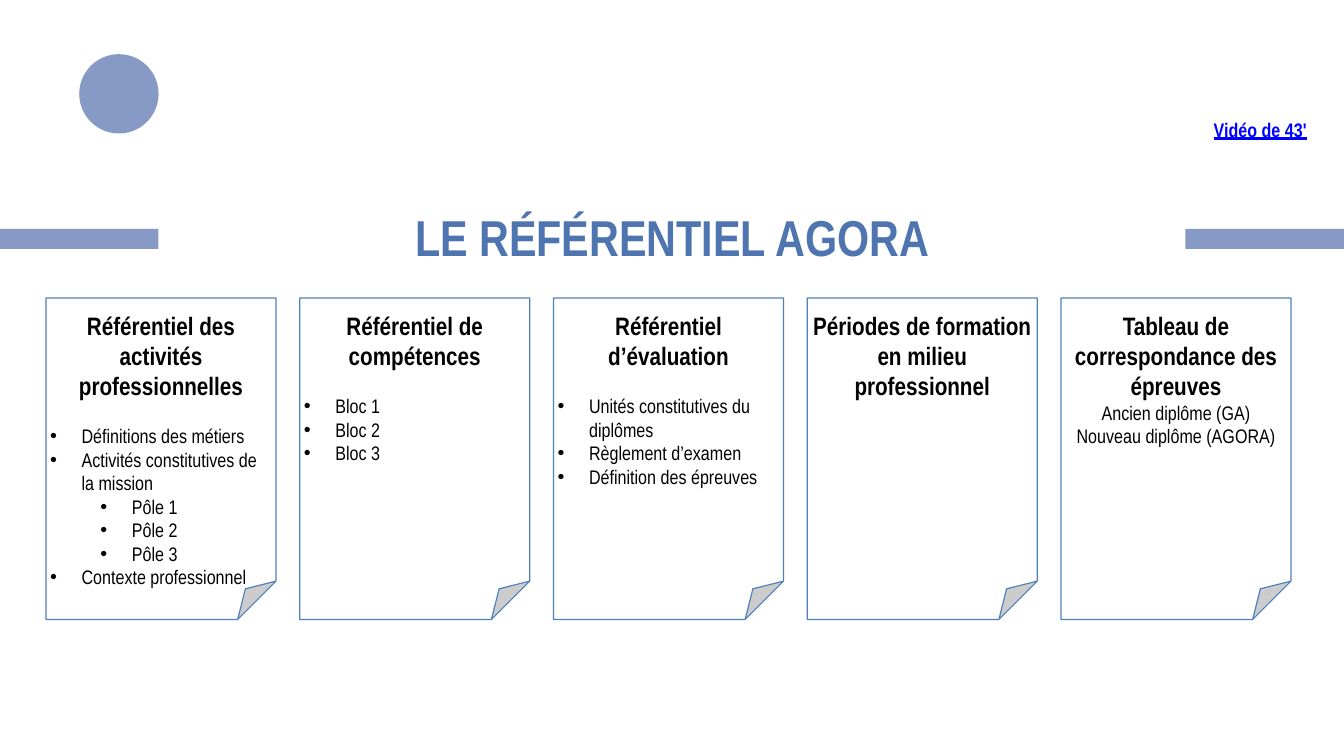
from lxml import etree
from pptx import Presentation
from pptx.dml.color import RGBColor
from pptx.enum.shapes import MSO_SHAPE as Preset
from pptx.enum.text import MSO_ANCHOR as Anchor, PP_ALIGN as Align
from pptx.oxml.ns import qn
from pptx.util import Pt

FONT = "Arial Narrow"
SLIDE_WIDTH, SLIDE_HEIGHT = 960, 540
ACCENT = "879AC6"

CARD_LEFT, CARD_TOP, CARD_PITCH = 32.9, 212.8, 181.25
CARD_WIDTH, CARD_HEIGHT = 164.3, 229.7
BULLET_HANG = 22.5
LEVEL_INDENT = 36
LIST_GAP = 16.8

# Each card: heading, bullets as (level, text), centred lines
CARDS = [
    ("Référentiel des activités professionnelles",
     [(0, "Définitions des métiers"),
      (0, "Activités constitutives de la mission"),
      (1, "Pôle 1"), (1, "Pôle 2"), (1, "Pôle 3"),
      (0, "Contexte professionnel")], []),
    ("Référentiel de compétences",
     [(0, "Bloc 1"), (0, "Bloc 2"), (0, "Bloc 3")], []),
    ("Référentiel d’évaluation",
     [(0, "Unités constitutives du diplômes"),
      (0, "Règlement d’examen"),
      (0, "Définition des épreuves")], []),
    ("Périodes de formation en milieu professionnel", [], []),
    ("Tableau de correspondance des épreuves", [],
     ["Ancien diplôme (GA)", "Nouveau diplôme (AGORA)"]),
]


def color(hex_string):
    return RGBColor.from_string(hex_string)


def add_preset(slide, preset, left, top, width, height, fill, line=None):
    shape = slide.shapes.add_shape(
        preset, Pt(left), Pt(top), Pt(width), Pt(height))
    shape.shadow.inherit = False
    shape.fill.solid()
    shape.fill.fore_color.rgb = color(fill)
    if line:
        shape.line.color.rgb = color(line)
        shape.line.width = Pt(0.85)
    else:
        shape.line.fill.background()
    return shape


def set_frame(frame, anchor=Anchor.TOP, margins=(0, 0, 0, 0)):
    """Prepare a text frame; margins are left, top, right, bottom."""
    frame.word_wrap = True
    frame.vertical_anchor = anchor
    (frame.margin_left, frame.margin_top,
     frame.margin_right, frame.margin_bottom) = map(Pt, margins)
    return frame


def add_bullet(paragraph, level):
    paragraph.level = level
    properties = paragraph._p.get_or_add_pPr()
    properties.set("marL", str(Pt(BULLET_HANG + level * LEVEL_INDENT)))
    properties.set("indent", str(-Pt(BULLET_HANG)))
    etree.SubElement(properties, qn("a:buFont"), typeface="Arial")
    etree.SubElement(properties, qn("a:buChar"), char="•")


def write(frame, text, size=14, bold=False, underline=None, hex_color="000000",
          align=Align.LEFT, level=None, space_before=0):
    """Fill the empty first paragraph or append one; a level makes a bullet."""
    paragraph = frame.paragraphs[0] if not frame.text else frame.add_paragraph()
    paragraph.alignment = align
    if space_before:
        paragraph.space_before = Pt(space_before)
    if level is not None:
        add_bullet(paragraph, level)
    run = paragraph.add_run()
    run.text = text
    font = run.font
    font.name, font.size, font.bold = FONT, Pt(size), bold
    font.underline = underline
    font.color.rgb = color(hex_color)


def add_text(slide, text, left, top, width, height, anchor, **text_format):
    box = slide.shapes.add_textbox(Pt(left), Pt(top), Pt(width), Pt(height))
    write(set_frame(box.text_frame, anchor), text, **text_format)


def add_card(slide, left, heading, bullets, lines):
    card = add_preset(slide, Preset.FOLDED_CORNER, left, CARD_TOP,
                      CARD_WIDTH, CARD_HEIGHT, "FFFFFF", line="4F81BD")
    frame = set_frame(card.text_frame, margins=(2.9, 8.6, 2.9, 0))
    write(frame, heading, size=18, bold=True, align=Align.CENTER)
    for index, (level, text) in enumerate(bullets):
        write(frame, text, level=level,
              space_before=0 if index else LIST_GAP)
    for text in lines:
        write(frame, text, align=Align.CENTER)


def main():
    presentation = Presentation()
    presentation.slide_width = Pt(SLIDE_WIDTH)
    presentation.slide_height = Pt(SLIDE_HEIGHT)
    slide = presentation.slides.add_slide(presentation.slide_layouts[6])

    bar_width = 113.2
    for left in (0, SLIDE_WIDTH - bar_width):
        add_preset(slide, Preset.RECTANGLE, left, 163.5, bar_width, 14.3, ACCENT)
    add_preset(slide, Preset.OVAL, 56.6, 38.7, 56.7, 56.7, ACCENT)

    add_text(slide, "LE RÉFÉRENTIEL AGORA", 111.6, 147, 737.3, 44,
             Anchor.MIDDLE, size=36, bold=True, hex_color="4E75B0",
             align=Align.CENTER)
    for index, card in enumerate(CARDS):
        add_card(slide, CARD_LEFT + index * CARD_PITCH, *card)
    add_text(slide, "Vidéo de 43'", 866.9, 84.2, 77, 17, Anchor.TOP,
             bold=True, underline=True, hex_color="0000FF")

    presentation.save("out.pptx")


if __name__ == "__main__":
    main()
